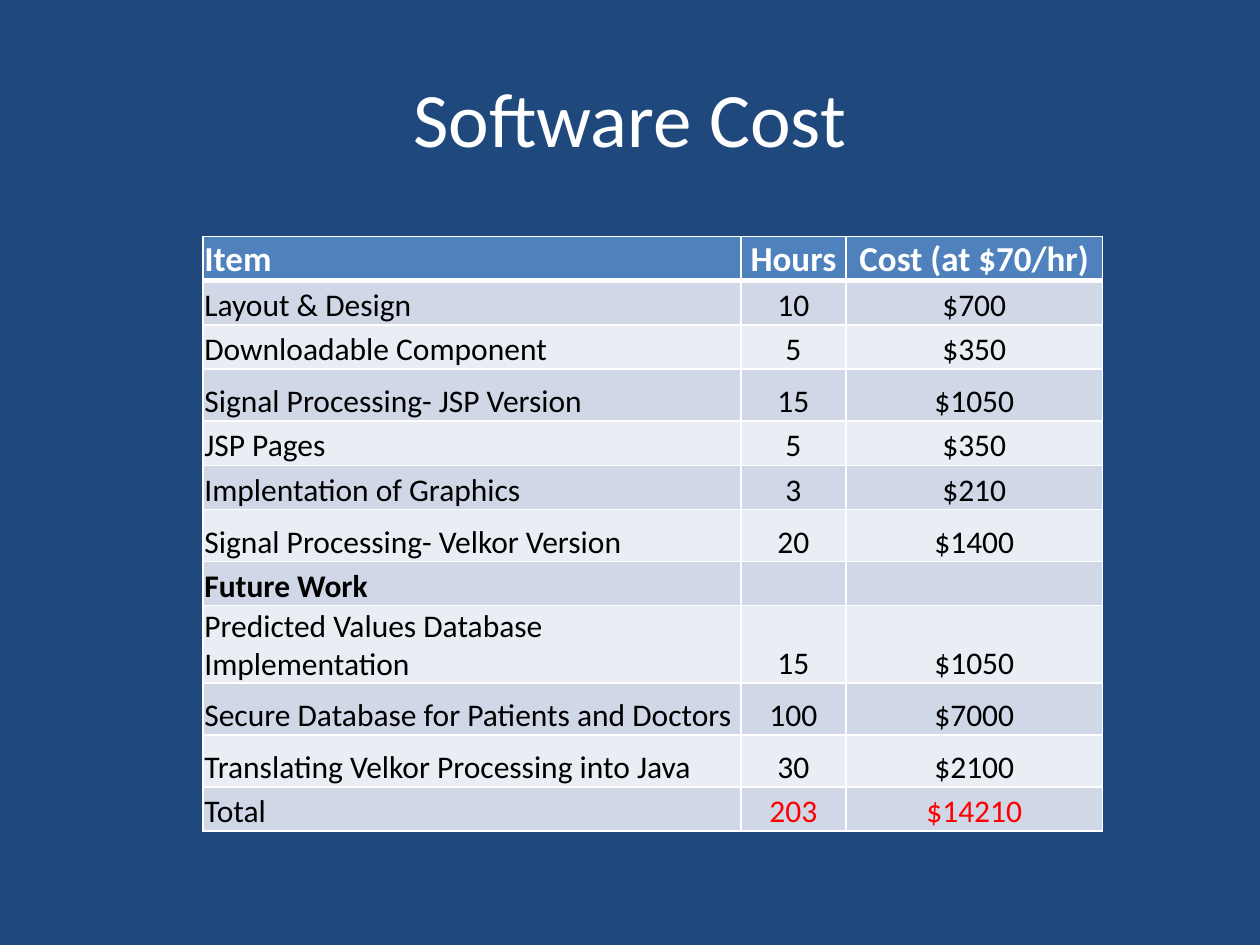
from lxml import etree
from pptx import Presentation
from pptx.dml.color import RGBColor
from pptx.enum.text import MSO_ANCHOR, PP_ALIGN
from pptx.oxml.ns import qn
from pptx.util import Cm, Pt

LEFT, CENTER = PP_ALIGN.LEFT, PP_ALIGN.CENTER
MIDDLE, BOTTOM = MSO_ANCHOR.MIDDLE, MSO_ANCHOR.BOTTOM

TITLE = "Software Cost"
HEAD = ("Item", "Hours", "Cost (at $70/hr)")
ITEMS = [
    ("Layout & Design", "10", "$700"),
    ("Downloadable Component", "5", "$350"),
    ("Signal Processing- JSP Version", "15", "$1050"),
    ("JSP Pages", "5", "$350"),
    ("Implentation of Graphics", "3", "$210"),
    ("Signal Processing- Velkor Version", "20", "$1400"),
    ("Future Work", "", ""),
    ("Predicted Values Database Implementation", "15", "$1050"),
    ("Secure Database for Patients and Doctors", "100", "$7000"),
    ("Translating Velkor Processing into Java", "30", "$2100"),
    ("Total", "203", "$14210"),
]
ROWS = [HEAD] + ITEMS
TALL = {3, 6, 9, 10}
WIDTHS = (10.85, 2.11, 5.18)
LOW, HIGH = 0.89, 1.05

THEME = {
    "font": "Calibri",
    "back": "1F497D",
    "light": "FFFFFF",
    "dark": "000000",
    "sum": "FF0000",
    "head": "4F81BD",
    "bands": ("E9EDF4", "D0D8E8"),
    "title_size": 44,
    "head_size": 20,
    "body_size": 18,
}


def write(frame, text, size, color, bold=False, align=LEFT):
    para = frame.paragraphs[0]
    para.alignment = align
    para.font.size = Pt(size)
    if not text:
        return
    run = para.add_run()
    run.text = text
    font = run.font
    font.name, font.size, font.bold = THEME["font"], Pt(size), bold
    font.color.rgb = RGBColor.from_string(color)


def paint(fill, color):
    fill.solid()
    fill.fore_color.rgb = RGBColor.from_string(color)


def edge(cell, row):
    """Draw white cell borders, thick on the line below the header."""
    widths = {"L": 1, "R": 1, "T": 3 if row == 1 else 1, "B": 3 if row == 0 else 1}
    props = cell._tc.get_or_add_tcPr()
    for spot, (side, width) in enumerate(widths.items()):
        line = etree.Element(qn(f"a:ln{side}"), w=str(Pt(width)))
        solid = etree.SubElement(line, qn("a:solidFill"))
        etree.SubElement(solid, qn("a:srgbClr"), val=THEME["light"])
        props.insert(spot, line)


def style(row, col, text):
    """Return the text format of one table cell."""
    look = {"size": THEME["body_size"], "color": THEME["dark"],
            "bold": text == "Future Work", "align": CENTER if col else LEFT}
    if row == 0:
        look.update(size=THEME["head_size"], color=THEME["light"], bold=True)
    elif row == len(ROWS) - 1 and col:
        look["color"] = THEME["sum"]
    return look


def add_title(slide):
    frame = slide.shapes.add_textbox(Cm(1.27), Cm(0.76), Cm(22.86), Cm(3.18)).text_frame
    frame.word_wrap = True
    frame.vertical_anchor = MIDDLE
    write(frame, TITLE, THEME["title_size"], THEME["light"], align=CENTER)


def add_costs(slide):
    heights = [HIGH if row in TALL else LOW for row in range(len(ROWS))]
    table = slide.shapes.add_table(len(ROWS), len(HEAD), Cm(4.09), Cm(4.77),
                                   Cm(sum(WIDTHS)), Cm(sum(heights))).table
    for col, width in enumerate(WIDTHS):
        table.columns[col].width = Cm(width)
    for row, texts in enumerate(ROWS):
        table.rows[row].height = Cm(heights[row])
        for col, text in enumerate(texts):
            cell = table.cell(row, col)
            cell.margin_left = cell.margin_right = cell.margin_top = Cm(0.03)
            cell.margin_bottom = 0
            cell.vertical_anchor = BOTTOM
            paint(cell.fill, THEME["bands"][row % 2] if row else THEME["head"])
            edge(cell, row)
            write(cell.text_frame, text, **style(row, col, text))


def main():
    deck = Presentation()
    deck.slide_width, deck.slide_height = Cm(25.4), Cm(19.05)
    slide = deck.slides.add_slide(deck.slide_layouts[6])
    paint(slide.background.fill, THEME["back"])
    add_title(slide)
    add_costs(slide)
    deck.save("out.pptx")


if __name__ == "__main__":
    main()
